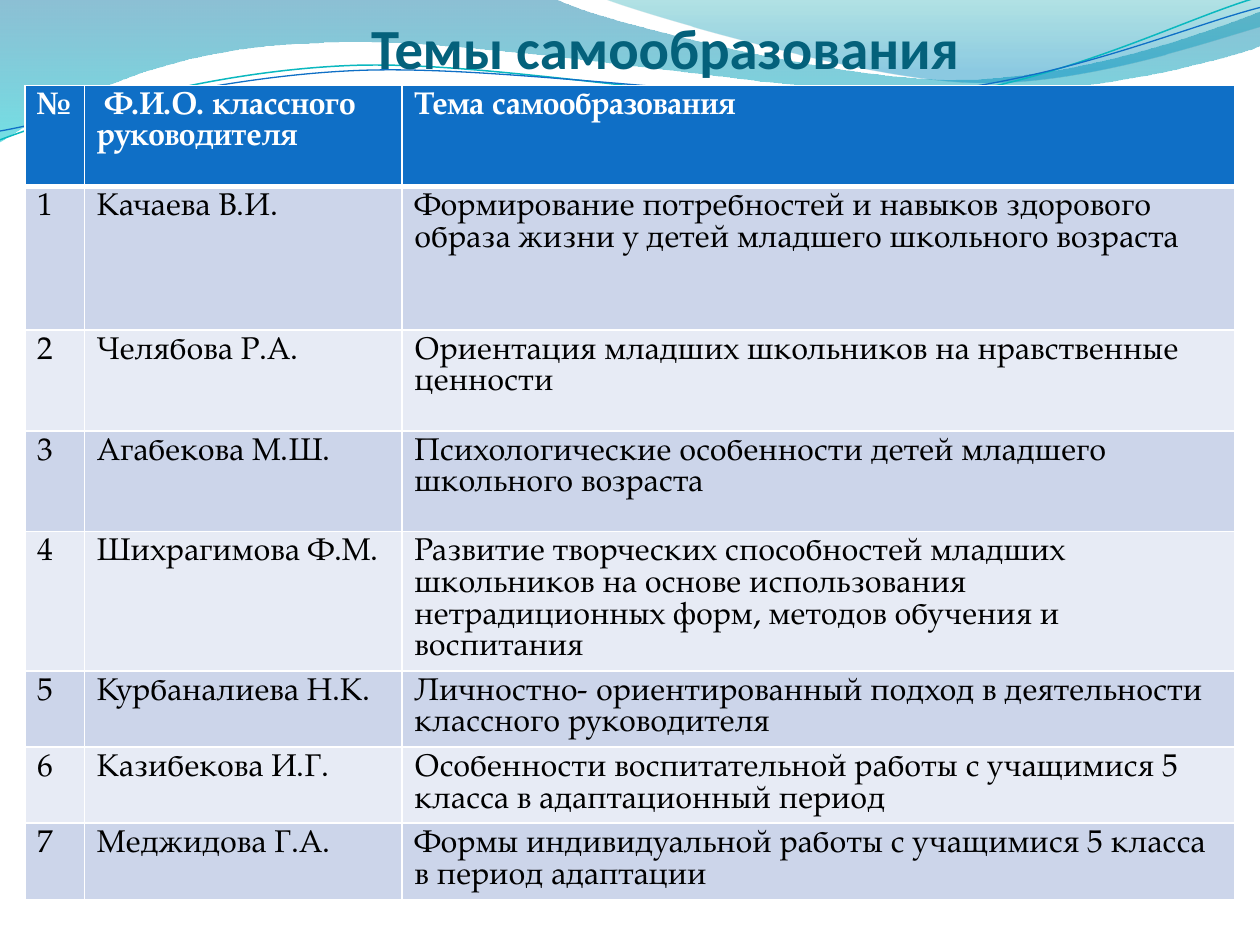
from math import cos, radians, sin

from lxml.etree import SubElement
from pptx import Presentation
from pptx.dml.color import RGBColor
from pptx.enum.text import MSO_ANCHOR, PP_ALIGN
from pptx.oxml.ns import qn
from pptx.util import Inches, Pt

COLORS = {
    "title": "04617B", "header": "0F6FC6", "odd": "CCD5EA", "even": "E7EBF5",
    "white": "FFFFFF", "black": "000000", "teal": "0AB8BF",
    "deep": "0074A1", "cyan": "00C6CF", "sea": "00A1A9", "sky": "008BBF",
}
TITLE_FONT = "Calibri"
TABLE_FONT = "TeX Gyre Pagella"
LINE_TILT = -2.7

LEFT_WAVE = [
    (0, 0), (4.4, -0.01),
    (4.76, 0.17, 6.64, 0.63, 7.58, 0.63), (8.53, 0.63, 9.58, 0.26, 10, 0.09),
    (10.01, 0.36),
    (9.83, 0.44, 8.7, 0.76, 7.46, 0.75), (6.22, 0.75, 3.82, 0.28, 2.57, 0.34),
    (1.29, 0.36, 0.46, 0.83, -0.01, 1.13), (0, 0),
]
RIGHT_WAVE = [
    (4.79, -0.01),
    (5.09, 0.11, 6.82, 0.62, 7.69, 0.65), (8.56, 0.69, 9.61, 0.32, 10, 0.21),
    (10, 0), (4.79, -0.01),
]
TEAL_LINE = [
    (0, 1.11),
    (0.48, 0.93, 1.58, 0.57, 2.77, 0.52), (3.95, 0.47, 5.93, 0.89, 7.13, 0.8),
    (8.33, 0.71, 9.38, 0.15, 9.98, -0.02),
]
BLUE_LINE = [
    (0, 1.04),
    (0.47, 0.96, 1.64, 0.61, 2.83, 0.56), (4.03, 0.51, 5.97, 0.84, 7.17, 0.75),
    (8.36, 0.67, 9.41, 0.21, 10, 0.06),
]

COLUMNS = [0.47, 2.52, 6.61]
ROWS = [0.8, 1.14, 0.8, 0.8, 1.03, 0.46, 0.46, 0.46]
HEADINGS = ["№", "Ф.И.О. классного руководителя", "Тема самообразования"]
TOPICS = [
    ("Качаева В.И.", "Формирование потребностей и навыков здорового образа жизни у детей младшего школьного возраста"),
    ("Челябова Р.А.", "Ориентация младших школьников на нравственные ценности"),
    ("Агабекова М.Ш.", "Психологические особенности детей младшего школьного возраста"),
    ("Шихрагимова Ф.М.", "Развитие творческих способностей младших школьников на основе использования нетрадиционных форм, методов обучения и воспитания"),
    ("Курбаналиева Н.К.", "Личностно- ориентированный подход в деятельности классного руководителя"),
    ("Казибекова И.Г.", "Особенности воспитательной работы с учащимися 5 класса в адаптационный период"),
    ("Меджидова Г.А.", "Формы индивидуальной работы с учащимися 5 класса в период адаптации"),
]


def color(name):
    return RGBColor.from_string(COLORS[name])


def turn(points, center, degrees):
    cx, cy = center
    c, n = cos(radians(degrees)), sin(radians(degrees))
    return [(cx + (x - cx) * c - (y - cy) * n, cy + (x - cx) * n + (y - cy) * c)
            for x, y in points]


def add_curve(s, left, top, path, close, center=(0, 0), tilt=0):
    points = [pair for segment in path for pair in zip(segment[::2], segment[1::2])]
    points = [(left + Inches(x), top + Inches(y)) for x, y in turn(points, center, -tilt)]
    builder = s.shapes.build_freeform(*points[0], scale=1.0)
    builder.add_line_segments(points[1:], close=close)
    shape = builder.convert_to_shape()
    lines = list(shape._element.iter(qn("a:lnTo")))
    for segment in path[1:]:
        parts, lines = lines[:len(segment) // 2], lines[len(segment) // 2:]
        if len(parts) == 3:
            curve = parts[0]
            bezier = SubElement(curve.getparent(), qn("a:cubicBezTo"))
            curve.addprevious(bezier)
            for part in parts:
                bezier.append(part[0])
                part.getparent().remove(part)
    shape.rotation = tilt
    shape.shadow.inherit = False
    return shape


def add_waves(s, left, top):
    for path, stops in [
        (LEFT_WAVE, [(0, "deep", 45), (1, "cyan", 55)]),
        (RIGHT_WAVE, [(0, "sea", 30), (0.8, "sky", 45)]),
    ]:
        shape = add_curve(s, left, top, path, True)
        shape.line.fill.background()
        shape.fill.gradient()
        shape.fill.gradient_angle = 270
        for stop, (position, name, _) in zip(shape.fill.gradient_stops, stops):
            stop.position = position
            stop.color.rgb = color(name)
        for rgb, (_, _, opacity) in zip(shape._element.spPr.iter(qn("a:srgbClr")), stops):
            SubElement(rgb, qn("a:alpha"), val=str(opacity * 1000))
    for path, name, width, center in [
        (TEAL_LINE, "teal", 0.85, (4.99, 0.58)),
        (BLUE_LINE, "header", 0.75, (5, 0.59)),
    ]:
        shape = add_curve(s, left, top, path, False, center, LINE_TILT)
        shape.fill.background()
        shape.line.color.rgb = color(name)
        shape.line.width = Pt(width)


def add_title(s, left, top, width, height):
    title = s.shapes.title
    s.shapes._spTree.append(title._element)
    title.left, title.top, title.width, title.height = left, top, width, height
    tf = title.text_frame
    tf.word_wrap = True
    tf.vertical_anchor = MSO_ANCHOR.BOTTOM
    tf.margin_left, tf.margin_top = Inches(0.56), Inches(0.05)
    tf.margin_right, tf.margin_bottom = 0, Inches(0.04)
    p = tf.paragraphs[0]
    p.text = "Темы самообразования"
    p.alignment = PP_ALIGN.CENTER
    p.font.name = TITLE_FONT
    p.font.size = Pt(32.4)
    p.font.bold = True
    p.font.color.rgb = color("title")


def add_borders(cell, top, bottom):
    tcPr = cell._tc.get_or_add_tcPr()
    for side, width in [("L", 1), ("R", 1), ("T", top), ("B", bottom)]:
        line = SubElement(tcPr, qn(f"a:ln{side}"), w=str(Pt(width)))
        fill = SubElement(line, qn("a:solidFill"))
        SubElement(fill, qn("a:srgbClr"), val=COLORS["white"])


def add_topics_table(s, left, top):
    rows = [HEADINGS] + [(str(n), *topic) for n, topic in enumerate(TOPICS, 1)]
    table = s.shapes.add_table(len(ROWS), len(COLUMNS), left, top,
                               Inches(sum(COLUMNS)), Inches(sum(ROWS))).table
    for column, width in zip(table.columns, COLUMNS):
        column.width = Inches(width)
    for i, (row, height, texts) in enumerate(zip(table.rows, ROWS, rows)):
        row.height = Inches(height)
        header = i == 0
        for cell, text in zip(row.cells, texts):
            add_borders(cell, 3 if i == 1 else 1, 3 if header else 1)
            cell.fill.solid()
            cell.fill.fore_color.rgb = color("header" if header else "odd" if i % 2 else "even")
            p = cell.text_frame.paragraphs[0]
            p.text = text
            p.font.name = TABLE_FONT
            p.font.size = Pt(18)
            p.font.bold = header
            p.font.color.rgb = color("white" if header else "black")
    name_heading = table.cell(0, 1).text_frame.paragraphs[0]
    name_heading._p.get_or_add_pPr().set("indent", str(Inches(0.06)))


def main():
    prs = Presentation()
    prs.slide_width, prs.slide_height = Inches(10), Inches(7.5)
    s = prs.slides.add_slide(prs.slide_layouts[5])
    add_waves(s, 0, 0)
    add_title(s, Inches(0.5), 0, Inches(9), Inches(0.68))
    add_topics_table(s, Inches(0.2), Inches(0.68))
    prs.save("out.pptx")


if __name__ == "__main__":
    main()
